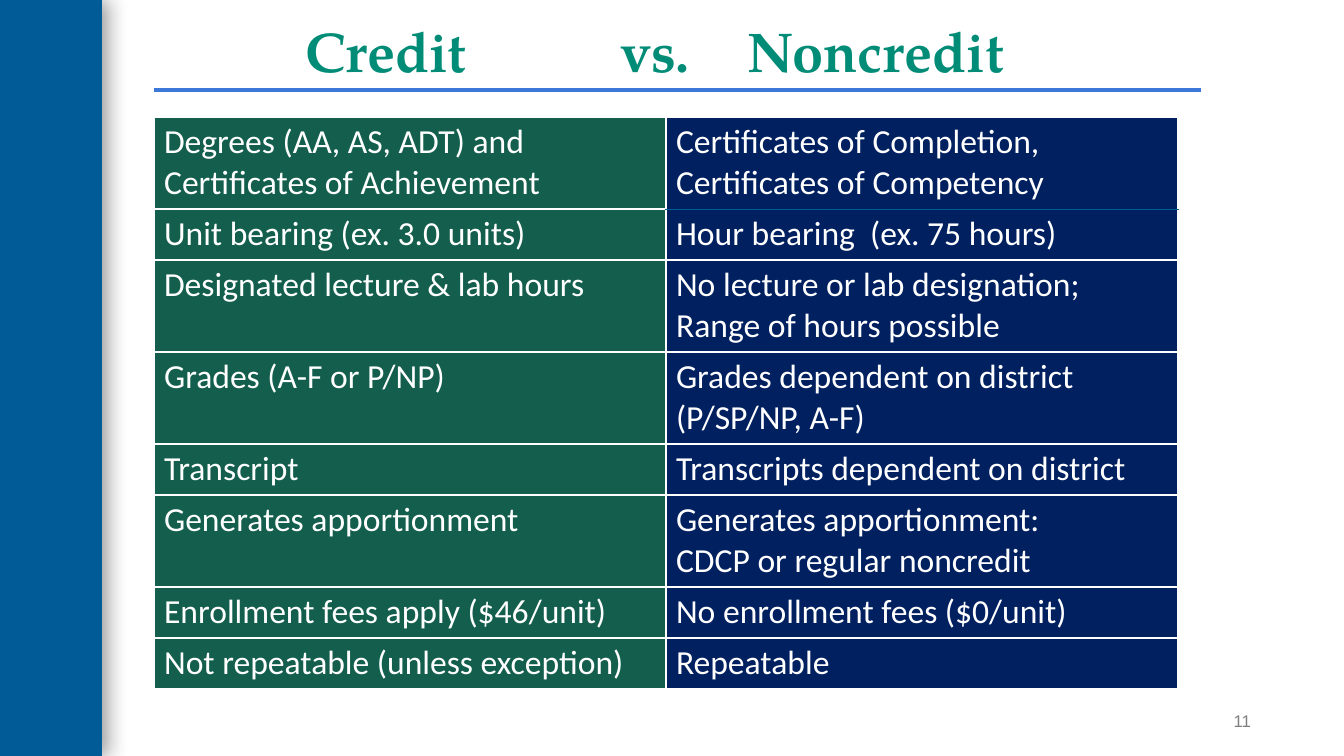
from dataclasses import dataclass

from lxml import etree
from pptx import Presentation
from pptx.dml.color import RGBColor
from pptx.enum.shapes import MSO_CONNECTOR, MSO_SHAPE
from pptx.enum.text import MSO_ANCHOR, MSO_AUTO_SIZE, PP_ALIGN
from pptx.oxml.ns import qn
from pptx.util import Pt

RECTANGLE = MSO_SHAPE.RECTANGLE
STRAIGHT = MSO_CONNECTOR.STRAIGHT
BOTTOM, MIDDLE, TOP = MSO_ANCHOR.BOTTOM, MSO_ANCHOR.MIDDLE, MSO_ANCHOR.TOP
LEFT, RIGHT = PP_ALIGN.LEFT, PP_ALIGN.RIGHT
NO_AUTOFIT = MSO_AUTO_SIZE.NONE

EMU_PER_PX = 914400 / 100.8
TITLE_ONLY = 5
LINE_HEIGHT, CELL_PADDING = 41, 10


@dataclass(frozen=True)
class Theme:
    bar: str = "005B96"
    title: str = "008C77"
    credit: str = "135E4D"
    noncredit: str = "002060"
    rule: str = "3C78D8"
    number: str = "7F7F7F"
    white: str = "FFFFFF"
    shadow: str = "000000"
    title_font: str = "TeX Gyre Pagella"
    table_font: str = "Calibri"
    number_font: str = "Arial"
    title_size: int = 40
    table_size: int = 24
    number_size: int = 12


THEME = Theme()

COMPARISON = [
    ("Degrees (AA, AS, ADT) and\nCertificates of Achievement",
     "Certificates of Completion, Certificates of Competency", 2),
    ("Unit bearing (ex. 3.0 units)", "Hour bearing  (ex. 75 hours)", 1),
    ("Designated lecture & lab hours",
     "No lecture or lab designation;\nRange of hours possible", 2),
    ("Grades (A-F or P/NP)", "Grades dependent on district (P/SP/NP, A-F)", 2),
    ("Transcript", "Transcripts dependent on district", 1),
    ("Generates apportionment",
     "Generates apportionment:\nCDCP or regular noncredit", 2),
    ("Enrollment fees apply ($46/unit)", "No enrollment fees ($0/unit)", 1),
    ("Not repeatable (unless exception)", "Repeatable", 1),
]


def px(length):
    return round(length * EMU_PER_PX)


def add_element(parent, tag, **attributes):
    return etree.SubElement(parent, qn(tag), {k: str(v) for k, v in attributes.items()})


def set_font(para, name, size, color, bold=False):
    font = para.font
    font.name, font.size, font.bold = name, Pt(size), bold
    font.color.rgb = RGBColor.from_string(color)


def add_bar(page):
    bar = page.shapes.add_shape(RECTANGLE, 0, 0, px(102), px(756))
    bar.fill.solid()
    bar.fill.fore_color.rgb = RGBColor.from_string(THEME.bar)
    bar.line.fill.background()
    bar.shadow.inherit = False
    effects = bar._element.spPr.find(qn("a:effectLst"))
    shadow = add_element(effects, "a:outerShdw", blurRad=Pt(15), dist=Pt(3), dir=0,
                         algn="l", rotWithShape=0)
    color = add_element(shadow, "a:srgbClr", val=THEME.shadow)
    add_element(color, "a:alpha", val=40000)


def set_title(page, words, tab_stops):
    title = page.shapes.title
    title.left, title.top, title.width, title.height = px(141), px(17), px(1024), px(73)
    frame = title.text_frame
    frame.auto_size = NO_AUTOFIT
    frame.vertical_anchor = BOTTOM
    frame.margin_left = px(164)
    frame.text = "\t".join(words)
    para = frame.paragraphs[0]
    para.alignment = LEFT
    para.line_spacing = 0.9
    tabs = add_element(para._p.get_or_add_pPr(), "a:tabLst")
    for stop in tab_stops:
        add_element(tabs, "a:tab", pos=px(stop), algn="l")
    set_font(para, THEME.title_font, THEME.title_size, THEME.title, bold=True)


def add_rule(page):
    rule = page.shapes.add_connector(STRAIGHT, px(154), px(90), px(1201), px(90))
    rule.line.color.rgb = RGBColor.from_string(THEME.rule)
    rule.line.width = Pt(2.25)
    add_element(rule._element.spPr, "a:effectLst")


def set_borders(cell, special):
    properties = cell._tc.get_or_add_tcPr()
    for side in ("L", "R", "T", "B"):
        color, width = special.get(side, (THEME.white, 1))
        line = add_element(properties, f"a:ln{side}", w=Pt(width))
        fill = add_element(line, "a:solidFill")
        add_element(fill, "a:srgbClr", val=color)


def fill_cell(cell, text, color, special):
    set_borders(cell, special)
    cell.fill.solid()
    cell.fill.fore_color.rgb = RGBColor.from_string(color)
    cell.vertical_anchor = TOP
    cell.text = text
    for para in cell.text_frame.paragraphs:
        set_font(para, THEME.table_font, THEME.table_size, THEME.white)


def add_comparison(page):
    heights = [lines * LINE_HEIGHT + CELL_PADDING for *_, lines in COMPARISON]
    table = page.shapes.add_table(len(COMPARISON), 2, px(154), px(117),
                                  px(1024), px(sum(heights))).table
    table.first_row = table.horz_banding = False
    thin = (THEME.bar, 0.5)
    special_borders = {(0, 1): {"B": thin}, (1, 1): {"T": thin}}
    for row, (credit, noncredit, _) in enumerate(COMPARISON):
        table.rows[row].height = px(heights[row])
        columns = ((credit, THEME.credit), (noncredit, THEME.noncredit))
        for column, (text, color) in enumerate(columns):
            fill_cell(table.cell(row, column), text, color,
                      special_borders.get((row, column), {}))


def add_page_number(page, number):
    box = page.shapes.add_textbox(px(1150), px(701), px(101), px(40))
    frame = box.text_frame
    frame.word_wrap = True
    frame.vertical_anchor = MIDDLE
    frame.margin_right = 0
    frame.text = number
    para = frame.paragraphs[0]
    para.alignment = RIGHT
    set_font(para, THEME.number_font, THEME.number_size, THEME.number)


def main():
    deck = Presentation()
    deck.slide_width, deck.slide_height = px(1344), px(756)
    page = deck.slides.add_slide(deck.slide_layouts[TITLE_ONLY])
    add_bar(page)
    set_title(page, ("Credit", "vs.", "Noncredit"), (315, 442))
    add_page_number(page, "11")
    add_comparison(page)
    add_rule(page)
    deck.save("out.pptx")


if __name__ == "__main__":
    main()
